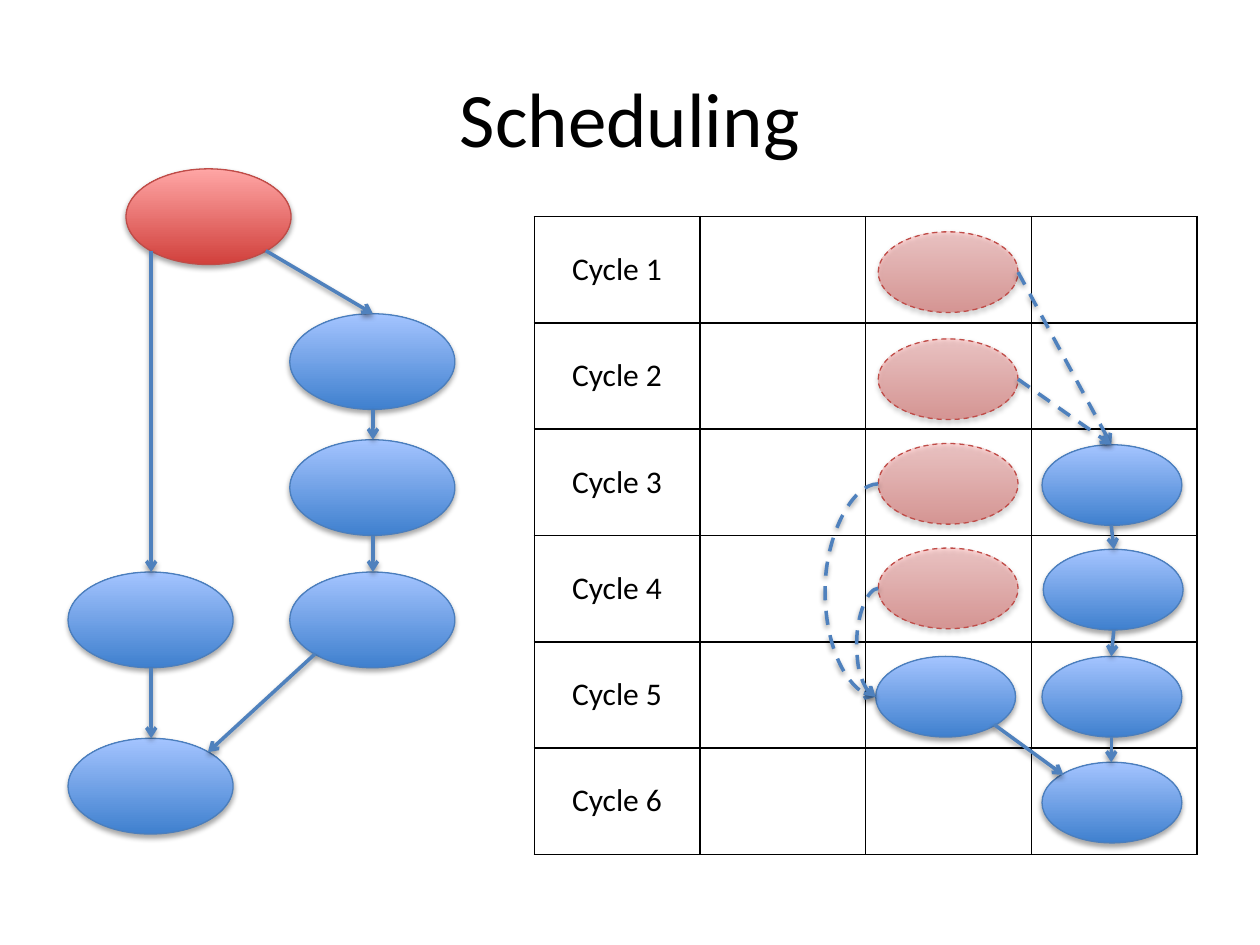
from lxml.etree import SubElement
from pptx import Presentation
from pptx.dml.color import RGBColor as RGB
from pptx.enum.dml import MSO_LINE as DASH
from pptx.enum.shapes import MSO_CONNECTOR as CONN, MSO_SHAPE as SHAPE
from pptx.enum.text import MSO_ANCHOR as ANCHOR, PP_ALIGN as ALIGN
from pptx.oxml.ns import qn
from pptx.util import Emu, Pt

COLORS = {
    "text": "000000", "arrow": "4F81BD",
    "blue_dark": "3F80CE", "blue_light": "A4C4FF", "blue_line": "4B7EBC",
    "red_dark": "D1403C", "red_light": "FFA6A5", "red_line": "BF4C48",
}
NODES = {
    "load": (100, 134, "red"), "step1": (230, 249, "blue"),
    "step2": (230, 349, "blue"), "step3": (230, 454, "blue"),
    "side": (54, 454, "blue"), "join": (54, 586, "blue"),
}
SLOTS = {
    "load1": (697, 184, "red"), "load2": (697, 269, "red"),
    "load3": (697, 352, "red"), "load4": (697, 435, "red"),
    "cycle3": (827, 353, "blue"), "cycle4": (828, 436, "blue"),
    "cycle5": (827, 521, "blue"), "side5": (695, 521, "blue"),
    "cycle6": (827, 605, "blue"),
}
LINKS = [
    ("load", "bottom_left", "side", "top"),
    ("load", "bottom_right", "step1", "top"),
    ("step1", "bottom", "step2", "top"),
    ("step2", "bottom", "step3", "top"),
    ("side", "bottom", "join", "top"),
    ("step3", "bottom_left", "join", "top_right"),
    ("cycle3", "bottom", "cycle4", "top"),
    ("cycle4", "bottom", "cycle5", "top"),
    ("cycle5", "bottom", "cycle6", "top"),
    ("side5", "bottom_right", "cycle6", "top_left"),
]
SITES = {
    "top": (0.5, 0), "bottom": (0.5, 1), "left": (0, 0.5), "right": (1, 0.5),
    "top_left": (0.15, 0.15), "top_right": (0.85, 0.15),
    "bottom_left": (0.15, 0.85), "bottom_right": (0.85, 0.85),
}


def px(n):
    return Emu(n * 9144)


def rgb(name):
    return RGB.from_string(COLORS[name])


def write(tf, text, size=18, font="Calibri", color="text", align=ALIGN.CENTER):
    p = tf.paragraphs[0]
    p.alignment = align
    r = p.add_run()
    r.text = text
    r.font.size, r.font.name, r.font.color.rgb = Pt(size), font, rgb(color)


def add(parent, tag, **attrs):
    return SubElement(parent, qn(tag), {k: str(v) for k, v in attrs.items()})


class Diagram:
    """Draws dependency graphs and schedule tables on one slide."""

    def __init__(self, prs):
        self.s = prs.slides.add_slide(prs.slide_layouts[5])
        self.nodes = {}

    def title(self, text, x, y, w, h):
        sp = self.s.shapes.title
        sp.left, sp.top, sp.width, sp.height = map(px, (x, y, w, h))
        sp.text_frame.vertical_anchor = ANCHOR.MIDDLE
        write(sp.text_frame, text, size=44)

    def table(self, labels, cols, x, y, w, h):
        frame = self.s.shapes.add_table(len(labels), cols, px(x), px(y), px(w), px(h))
        tbl = frame.table
        tbl.first_row = tbl.horz_banding = False
        for cell in tbl.iter_cells():
            self.border(cell)
            cell.fill.background()
        for i, label in enumerate(labels):
            cell = tbl.cell(i, 0)
            cell.vertical_anchor = ANCHOR.MIDDLE
            write(cell.text_frame, label)

    def border(self, cell):
        tcPr = cell._tc.get_or_add_tcPr()
        for side in "LRTB":
            ln = add(tcPr, f"a:ln{side}", w=Pt(1))
            add(add(ln, "a:solidFill"), "a:srgbClr", val=COLORS["text"])

    def shadow(self, sp, dist, alpha):
        effects = add(sp._element.spPr, "a:effectLst")
        shadow = add(effects, "a:outerShdw", blurRad=Pt(3.1), dist=Pt(dist),
                     dir=5400000, rotWithShape=0)
        add(add(shadow, "a:srgbClr", val="000000"), "a:alpha", val=alpha * 1000)

    def node(self, name, x, y, w, h, hue, faded=False):
        sp = self.s.shapes.add_shape(SHAPE.OVAL, px(x), px(y), px(w), px(h))
        sp.fill.gradient()
        sp.fill.gradient_angle = 90
        for stop, tone in zip(sp.fill.gradient_stops, ("dark", "light")):
            stop.color.rgb = rgb(f"{hue}_{tone}")
        sp.line.color.rgb, sp.line.width = rgb(f"{hue}_line"), Pt(0.75)
        if faded:
            sp.line.dash_style = DASH.DASH
            for clr in sp._element.spPr.findall(".//" + qn("a:gs") + "/" + qn("a:srgbClr")):
                add(clr, "a:alpha", val=44000)
        self.shadow(sp, 1.8, 35)
        self.nodes[name] = (x, y, w, h)

    def site(self, name, side):
        x, y, w, h = self.nodes[name]
        fx, fy = SITES[side]
        return round(x + fx * w), round(y + fy * h)

    def link(self, start, start_side, end, end_side, dashed=False, bend=0):
        x1, y1 = self.site(start, start_side)
        x2, y2 = self.site(end, end_side)
        kind = CONN.CURVE if bend else CONN.STRAIGHT
        c = self.s.shapes.add_connector(kind, px(x1), px(y1), px(x2), px(y2))
        c.line.color.rgb, c.line.width = rgb("arrow"), Pt(2)
        if dashed:
            c.line.dash_style = DASH.DASH
        if bend:
            guides = c._element.spPr.find(".//" + qn("a:avLst"))
            add(guides, "a:gd", name="adj1", fmla=f"val {bend * 100000 // (x1 - x2)}")
        add(c.line._get_or_add_ln(), "a:tailEnd", type="arrow")
        self.shadow(c, 1.6, 38)


def main():
    prs = Presentation()
    prs.slide_width, prs.slide_height = px(1000), px(750)
    d = Diagram(prs)
    d.table([f"Cycle {n}" for n in range(1, 7)], 4, 424, 172, 526, 506)
    d.title("Scheduling", 50, 30, 900, 125)
    for name, (x, y, hue) in NODES.items():
        d.node(name, x, y, 131, 76, hue)
    for name, (x, y, hue) in SLOTS.items():
        d.node(name, x, y, 111, 64, hue, faded=hue == "red")
    for ends in LINKS:
        d.link(*ends)
    for load in ("load1", "load2"):
        d.link(load, "right", "cycle3", "top", dashed=True)
    for load, bend in (("load3", 42), ("load4", 17)):
        d.link(load, "left", "side5", "left", dashed=True, bend=bend)
    prs.save("out.pptx")


if __name__ == "__main__":
    main()
